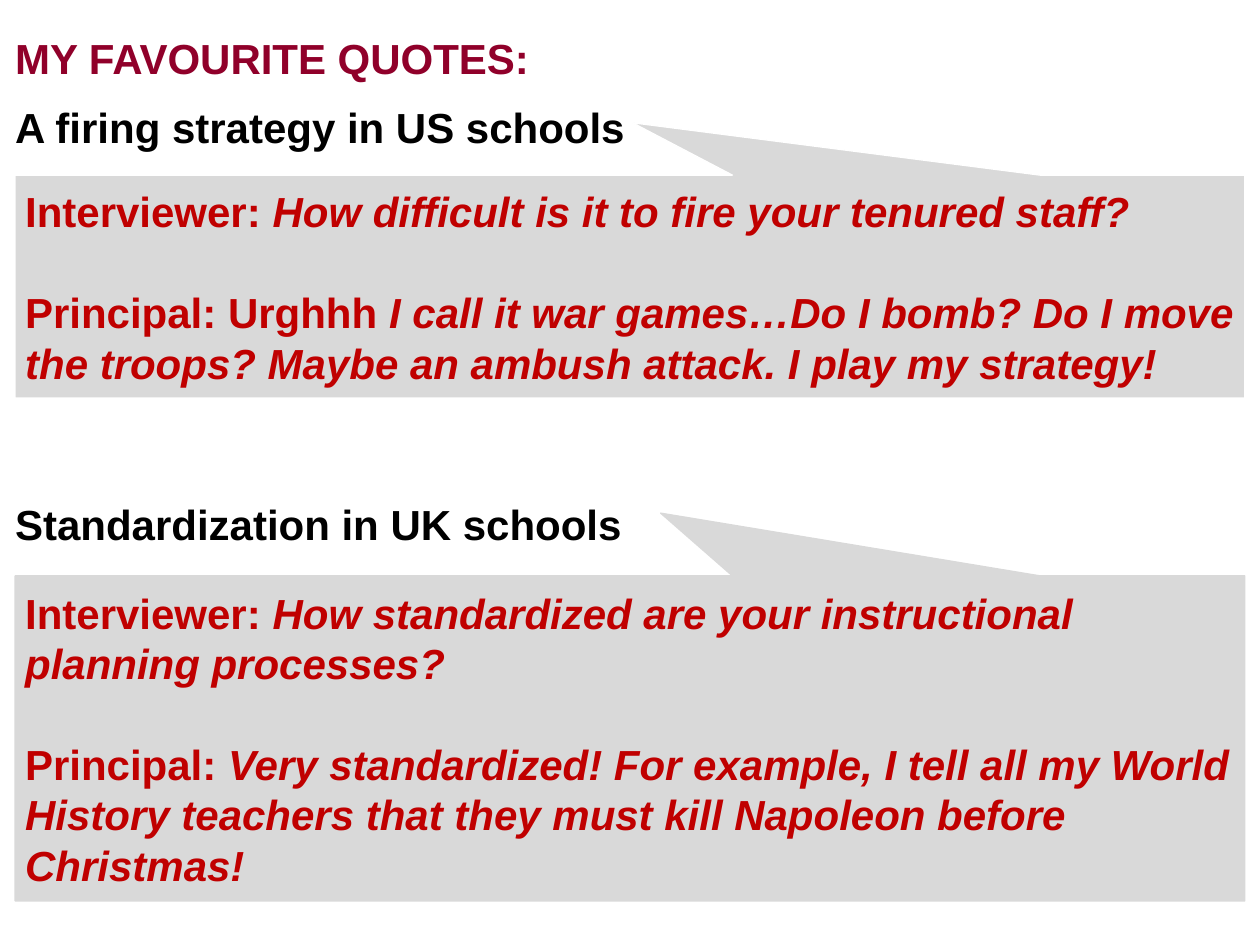
from dataclasses import dataclass

from pptx import Presentation
from pptx.dml.color import RGBColor
from pptx.enum.shapes import MSO_SHAPE as Shape
from pptx.enum.text import MSO_ANCHOR as Anchor, PP_ALIGN as Align
from pptx.util import Inches, Pt

FONT_SIZE = Pt(24)
LINE_PITCH = Pt(28.8)
LEFT = 0.12
GREY, RED, MAROON, BLACK, WHITE = "D9D9D9", "C00000", "90002A", "000000", "FFFFFF"


@dataclass
class Remark:
    speaker: str
    words: str


@dataclass
class Quote:
    heading: str
    heading_top: float
    heading_width: float
    top: float
    height: float
    pointer: tuple[float, float]
    outline: str
    remarks: list[Remark]


QUOTES = [
    Quote("Standardization in UK schools", 3.91, 5.51, 4.57, 2.58, (0.025, -0.693), GREY, [
        Remark("Interviewer: ",
               "How standardized are your instructional planning processes?"),
        Remark("Principal: ",
               "Very standardized! For example, I tell all my World History teachers "
               "that they must kill Napoleon before Christmas!"),
    ]),
    Quote("A firing strategy in US schools", 0.76, 8.23, 1.39, 1.77, (0.002, -0.735), WHITE, [
        Remark("Interviewer: ", "How difficult is it to fire your tenured staff?"),
        Remark("Principal: Urghhh ",
               "I call it war games…Do I bomb? Do I move the troops? "
               "Maybe an ambush attack. I play my strategy!"),
    ]),
]


def rgb(color: str) -> RGBColor:
    return RGBColor.from_string(color)


def format_run(run, color: str, italic: bool = False) -> None:
    font = run.font
    font.name, font.size, font.bold, font.italic = "Arial", FONT_SIZE, True, italic
    font.color.rgb = rgb(color)


def set_frame(text_frame, anchor: Anchor, left: float, top: float,
              right: float, bottom: float) -> None:
    text_frame.word_wrap = True
    text_frame.vertical_anchor = anchor
    text_frame.margin_left, text_frame.margin_top = Inches(left), Inches(top)
    text_frame.margin_right, text_frame.margin_bottom = Inches(right), Inches(bottom)


def write_heading(shape, text: str, color: str) -> None:
    text_frame = shape.text_frame
    set_frame(text_frame, Anchor.TOP, 0, 0.05, 0.1, 0.05)
    text_frame.text = text
    paragraph = text_frame.paragraphs[0]
    paragraph.alignment = Align.LEFT
    paragraph.line_spacing = LINE_PITCH
    format_run(paragraph.runs[0], color)


def draw_callout(slide, quote: Quote) -> None:
    callout = slide.shapes.add_shape(
        Shape.RECTANGULAR_CALLOUT,
        Inches(LEFT), Inches(quote.top), Inches(9.76), Inches(quote.height))
    callout.shadow.inherit = False
    callout.adjustments[0], callout.adjustments[1] = quote.pointer
    callout.fill.solid()
    callout.fill.fore_color.rgb = rgb(GREY)
    callout.line.color.rgb = rgb(quote.outline)
    callout.line.width = Pt(0.75)

    text_frame = callout.text_frame
    set_frame(text_frame, Anchor.MIDDLE, 0.08, 0.08, 0.08, 0.08)
    for index, remark in enumerate(quote.remarks):
        paragraph = text_frame.add_paragraph() if index else text_frame.paragraphs[0]
        paragraph.alignment = Align.LEFT
        paragraph.line_spacing = LINE_PITCH
        paragraph.space_before = LINE_PITCH if index else Pt(0)
        for text, italic in ((remark.speaker, False), (remark.words, True)):
            run = paragraph.add_run()
            run.text = text
            format_run(run, RED, italic)


def draw_heading(slide, quote: Quote) -> None:
    heading = slide.shapes.add_textbox(
        Inches(LEFT), Inches(quote.heading_top), Inches(quote.heading_width), Inches(0.5))
    write_heading(heading, quote.heading, BLACK)


def main() -> None:
    presentation = Presentation()
    presentation.slide_width, presentation.slide_height = Inches(10), Inches(7.5)
    slide = presentation.slides.add_slide(presentation.slide_layouts[5])

    # Title
    title = slide.shapes.title
    title.left, title.top = Inches(LEFT), Inches(0.21)
    title.width, title.height = Inches(10.08), Inches(0.51)
    write_heading(title, "MY FAVOURITE QUOTES:", MAROON)

    # Callouts with their headings
    for quote in QUOTES:
        draw_callout(slide, quote)
        draw_heading(slide, quote)

    presentation.save("out.pptx")


if __name__ == "__main__":
    main()
